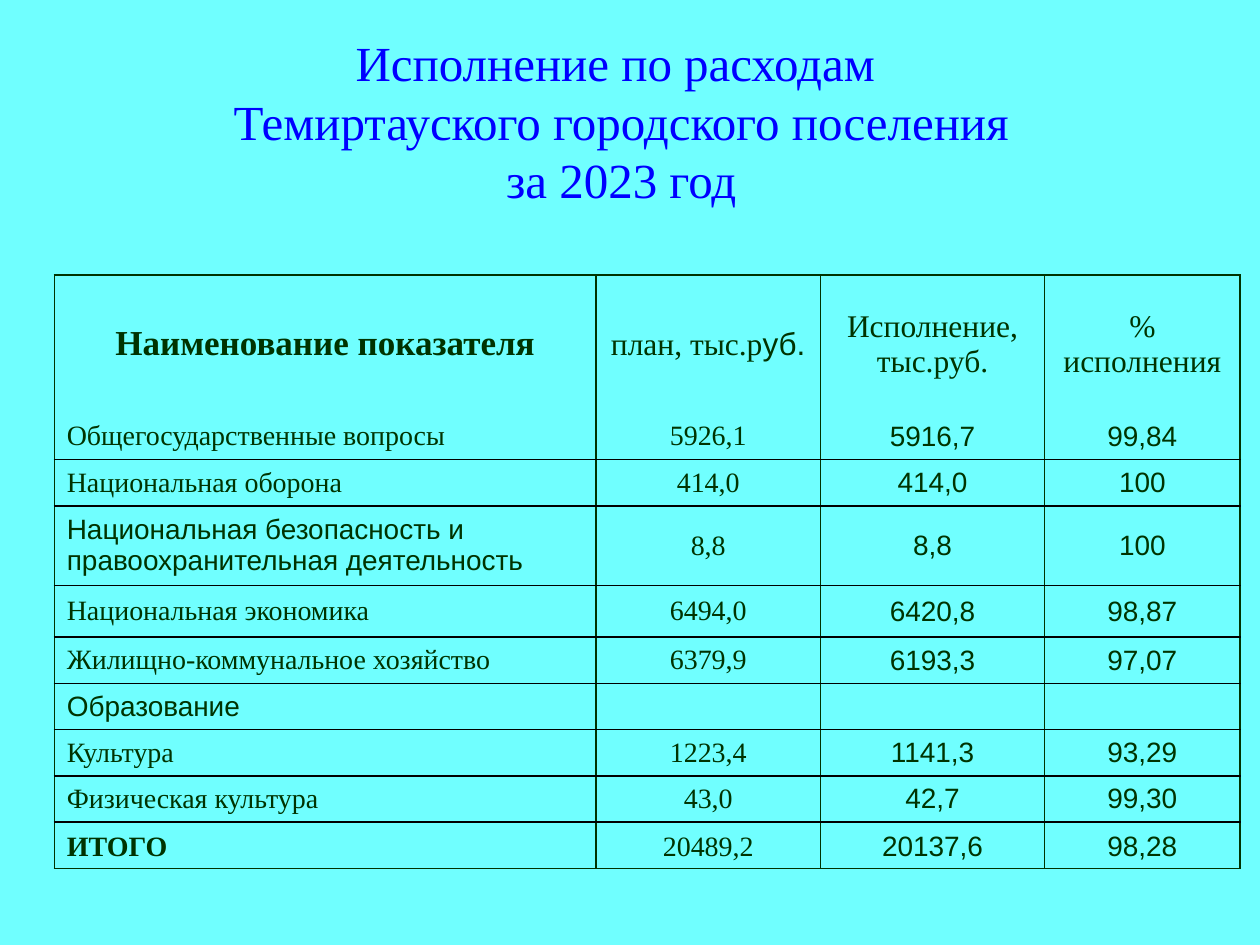
from dataclasses import dataclass

import lxml.etree
import pptx
import pptx.dml.color
import pptx.enum.text
import pptx.oxml.ns
import pptx.table
import pptx.util

Pt = pptx.util.Pt
Align = pptx.enum.text.PP_ALIGN
Anchor = pptx.enum.text.MSO_ANCHOR
qn = pptx.oxml.ns.qn

COLORS = {"background": "70FFFF", "title": "0000FF", "text": "003300", "rule": "000000"}
SERIF, SANS = "Times New Roman", "Arial"
COLUMN_WIDTHS = (309.6, 128.2, 128.2, 111.6)
HEADER_HEIGHT = 79.2
TITLE_LINES = (
    "Исполнение по расходам ",
    "Темиртауского городского поселения",
    "за 2023 год",
)


@dataclass(frozen=True)
class TextRun:
    text: str
    font: str = SERIF
    size: float = 16
    bold: bool = False


@dataclass(frozen=True)
class ExpenseRow:
    name: str
    values: tuple[str, str, str] = ("", "", "")
    name_font: str = SERIF
    height: float = 25.2
    total: bool = False


# One entry per header cell: paragraphs, each a list of runs
HEADERS = (
    [[TextRun("Наименование показателя", size=20, bold=True)]],
    [[TextRun("план, тыс.р", size=18), TextRun("уб.", SANS, 18)]],
    [[TextRun("Исполнение,", size=18)], [TextRun("тыс.руб.", size=18)]],
    [[TextRun("% исполнения", size=18)]],
)
EXPENSES = (
    ExpenseRow("Общегосударственные вопросы", ("5926,1", "5916,7", "99,84")),
    ExpenseRow("Национальная оборона", ("414,0", "414,0", "100")),
    ExpenseRow("Национальная безопасность и правоохранительная деятельность",
               ("8,8", "8,8", "100"), name_font=SANS, height=42.5),
    ExpenseRow("Национальная экономика", ("6494,0", "6420,8", "98,87"), height=29.5),
    ExpenseRow("Жилищно-коммунальное хозяйство", ("6379,9", "6193,3", "97,07")),
    ExpenseRow("Образование", name_font=SANS),
    ExpenseRow("Культура", ("1223,4", "1141,3", "93,29")),
    ExpenseRow("Физическая культура", ("43,0", "42,7", "99,30")),
    ExpenseRow("ИТОГО", ("20489,2", "20137,6", "98,28"), total=True),
)


def rgb(name: str) -> pptx.dml.color.RGBColor:
    return pptx.dml.color.RGBColor.from_string(COLORS[name])


def add_run(paragraph, content: TextRun, color: str) -> None:
    run = paragraph.add_run()
    run.text = content.text
    run.font.name = content.font
    run.font.size = Pt(content.size)
    run.font.bold = content.bold
    run.font.color.rgb = rgb(color)


def set_border(cell: pptx.table._Cell, side: str, color: str | None) -> None:
    """Draw a 1 pt border on side L, R, T or B, or hide it if color is None."""
    properties = cell._tc.get_or_add_tcPr()
    line = lxml.etree.SubElement(properties, qn(f"a:ln{side}"), w=str(Pt(1)))
    if color is None:
        lxml.etree.SubElement(line, qn("a:noFill"))
    else:
        fill = lxml.etree.SubElement(line, qn("a:solidFill"))
        lxml.etree.SubElement(fill, qn("a:srgbClr"), val=COLORS[color])


def fill_cell(cell: pptx.table._Cell, paragraphs: list[list[TextRun]],
              alignment: Align, anchor: Anchor,
              top: str | None, bottom: str | None) -> None:
    for side, color in (("L", "text"), ("R", "text"), ("T", top), ("B", bottom)):
        set_border(cell, side, color)
    cell.fill.background()
    cell.vertical_anchor = anchor
    frame = cell.text_frame
    for index, runs in enumerate(paragraphs):
        paragraph = frame.add_paragraph() if index else frame.paragraphs[0]
        paragraph.alignment = alignment
        for content in runs:
            if content.text:
                add_run(paragraph, content, "text")
            else:  # keeps an empty cell as low as a filled one
                lxml.etree.SubElement(paragraph._p, qn("a:endParaRPr"),
                                      sz=str(int(content.size * 100)))


def add_title(slide) -> None:
    title = slide.shapes.add_textbox(Pt(31), Pt(49), Pt(648), Pt(39.6))
    frame = title.text_frame
    frame.word_wrap = True
    frame.vertical_anchor = Anchor.MIDDLE
    paragraph = frame.paragraphs[0]
    paragraph.alignment = Align.CENTER
    for index, text in enumerate(TITLE_LINES):
        if index:
            paragraph.add_line_break()
        add_run(paragraph, TextRun(text, size=28), "title")


def add_expense_table(slide) -> None:
    heights = [HEADER_HEIGHT] + [expense.height for expense in EXPENSES]
    frame = slide.shapes.add_table(len(heights), len(COLUMN_WIDTHS), Pt(31), Pt(157),
                                   Pt(sum(COLUMN_WIDTHS)), Pt(sum(heights)))
    table = frame.table
    table.first_row = False
    table.horz_banding = False
    for column, width in zip(table.columns, COLUMN_WIDTHS):
        column.width = Pt(width)
    for row, height in zip(table.rows, heights):
        row.height = Pt(height)

    for column, paragraphs in enumerate(HEADERS):
        fill_cell(table.cell(0, column), paragraphs, Align.CENTER, Anchor.MIDDLE,
                  top="text", bottom=None)
    for row, expense in enumerate(EXPENSES, start=1):
        fonts = (expense.name_font, SERIF, SANS, SANS)
        for column, text in enumerate((expense.name, *expense.values)):
            is_name = column == 0
            content = TextRun(text, fonts[column], bold=expense.total and is_name)
            fill_cell(table.cell(row, column), [[content]],
                      Align.LEFT if is_name else Align.CENTER,
                      Anchor.BOTTOM if expense.total else Anchor.MIDDLE,
                      top=None if row == 1 else "rule",
                      bottom="text" if expense.total else "rule")


def main() -> None:
    presentation = pptx.Presentation()
    presentation.slide_width = Pt(720)
    presentation.slide_height = Pt(540)
    slide = presentation.slides.add_slide(presentation.slide_layouts[6])
    slide.background.fill.solid()
    slide.background.fill.fore_color.rgb = rgb("background")
    add_title(slide)
    add_expense_table(slide)
    presentation.save("out.pptx")


if __name__ == "__main__":
    main()
